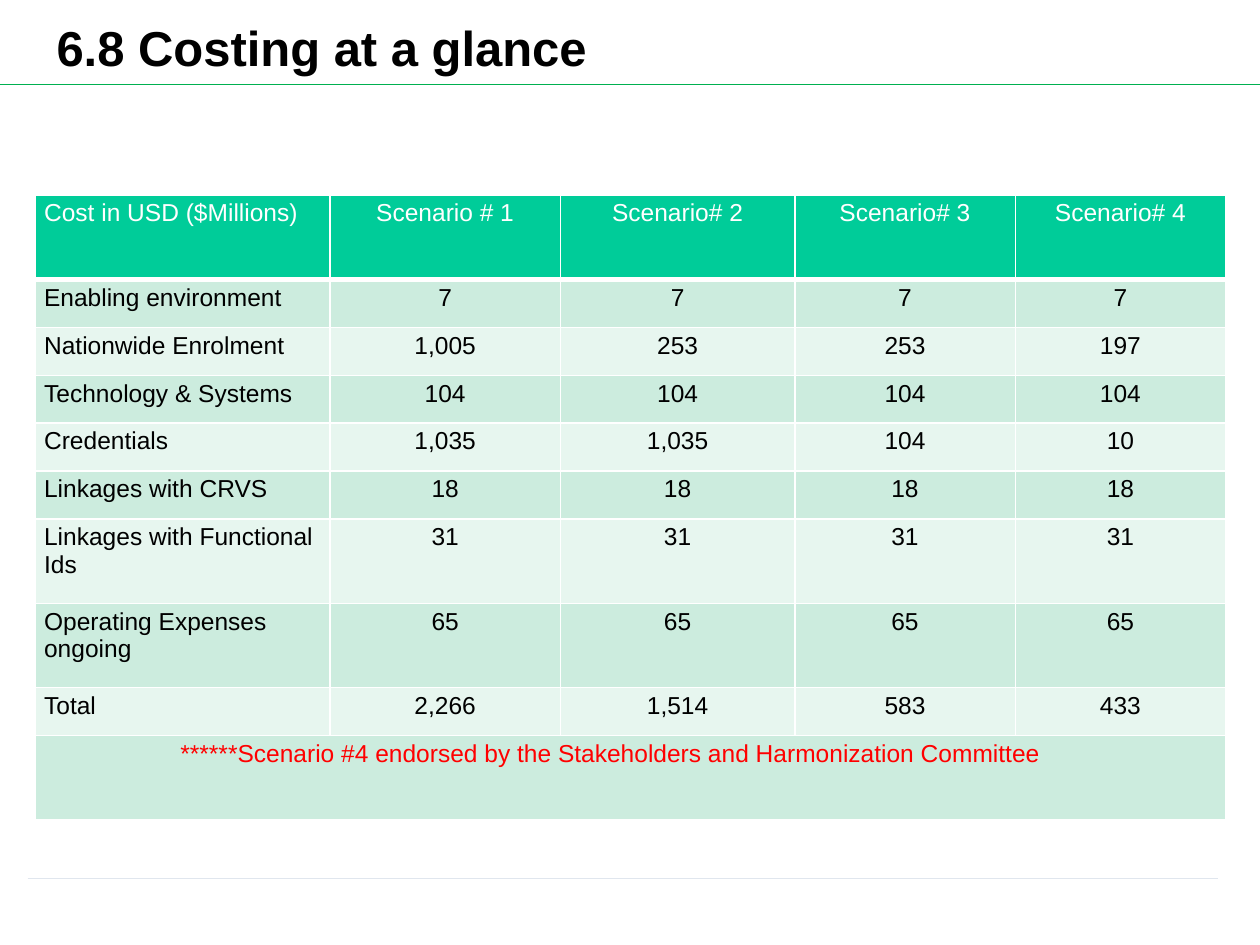
from lxml.etree import SubElement
from pptx import Presentation
from pptx.dml.color import RGBColor
from pptx.enum.shapes import MSO_CONNECTOR as CONN
from pptx.enum.text import MSO_ANCHOR as ANCHOR, PP_ALIGN as ALIGN
from pptx.oxml.ns import qn
from pptx.util import Pt

COLS = [168.5, 131.8, 133.9, 126, 120.2]
SHORT, TALL = 27.4, 48.2
HEADER = ["Cost in USD ($Millions)", "Scenario # 1", "Scenario# 2", "Scenario# 3", "Scenario# 4"]
COSTS = [
    (SHORT, "Enabling environment", "7", "7", "7", "7"),
    (SHORT, "Nationwide Enrolment", "1,005", "253", "253", "197"),
    (SHORT, "Technology & Systems", "104", "104", "104", "104"),
    (SHORT, "Credentials", "1,035", "1,035", "104", "10"),
    (SHORT, "Linkages with CRVS", "18", "18", "18", "18"),
    (TALL, "Linkages with Functional Ids", "31", "31", "31", "31"),
    (TALL, "Operating Expenses ongoing", "65", "65", "65", "65"),
    (SHORT, "Total", "2,266", "1,514", "583", "433"),
]
NOTE = "******Scenario #4 endorsed by the Stakeholders and Harmonization Committee"


def rgb(value):
    return RGBColor.from_string(value)


def write(tf, text, size=14, color="000000", bold=False, align=ALIGN.LEFT, spacing=None):
    p = tf.paragraphs[0]
    p.alignment = align
    if spacing:
        p.line_spacing = spacing
    r = p.add_run()
    r.text = text
    r.font.name = "Arial"
    r.font.size = Pt(size)
    r.font.bold = bold
    r.font.color.rgb = rgb(color)


def add_rule(s, x, y, w, color, weight):
    line = s.shapes.add_connector(CONN.STRAIGHT, Pt(x), Pt(y), Pt(x + w), Pt(y))
    line.line.color.rgb = rgb(color)
    line.line.width = Pt(weight)
    SubElement(line._element.spPr, qn("a:effectLst"))


def add_title(s, x, y, w, h):
    tf = s.shapes.add_textbox(Pt(x), Pt(y), Pt(w), Pt(h)).text_frame
    tf.word_wrap = True
    tf.vertical_anchor = ANCHOR.TOP
    write(tf, "6.8 Costing at a glance", size=28, bold=True, spacing=0.93)


def style_cell(cell, fill, bottom=1):
    cell.margin_left = cell.margin_right = Pt(5.2)
    cell.margin_top = cell.margin_bottom = Pt(2.6)
    tc_pr = cell._tc.get_or_add_tcPr()
    for side, width in (("L", 1), ("R", 1), ("T", 1), ("B", bottom)):
        ln = SubElement(tc_pr, qn(f"a:ln{side}"), w=str(Pt(width)))
        SubElement(SubElement(ln, qn("a:solidFill")), qn("a:srgbClr"), val="FFFFFF")
    cell.fill.solid()
    cell.fill.fore_color.rgb = rgb(fill)


def add_cost_table(s, x, y, w, h):
    rows = [(TALL, *HEADER), *COSTS, (TALL, NOTE)]
    table = s.shapes.add_table(len(rows), len(COLS), Pt(x), Pt(y), Pt(w), Pt(h)).table
    for column, width in zip(table.columns, COLS):
        column.width = Pt(width)
    for i, (height, *texts) in enumerate(rows):
        table.rows[i].height = Pt(height)
        fill = "00CC99" if i == 0 else "CCECDE" if i % 2 else "E7F6EF"
        for cell in table.rows[i].cells:
            style_cell(cell, fill, bottom=1 if i else 3)
        if texts == [NOTE]:
            note = table.cell(i, 0)
            note.merge(table.cell(i, len(COLS) - 1))
            note.margin_left = Pt(83)
            write(note.text_frame, NOTE, color="FF0000")
            continue
        for j, text in enumerate(texts):
            write(table.cell(i, j).text_frame, text, color="000000" if i else "FFFFFF",
                  align=ALIGN.CENTER if j else ALIGN.LEFT)


def main():
    prs = Presentation()
    prs.slide_width, prs.slide_height = Pt(720), Pt(540)
    s = prs.slides.add_slide(prs.slide_layouts[6])
    add_rule(s, 0, 48.2, 720, "00B050", 0.75)
    add_rule(s, 15.8, 501.8, 680.4, "E0E6EE", 0.25)
    add_title(s, 25.2, 9.4, 591.8, 49.7)
    add_cost_table(s, 20, 111.5, 680.4, 357)
    prs.save("out.pptx")


if __name__ == "__main__":
    main()
